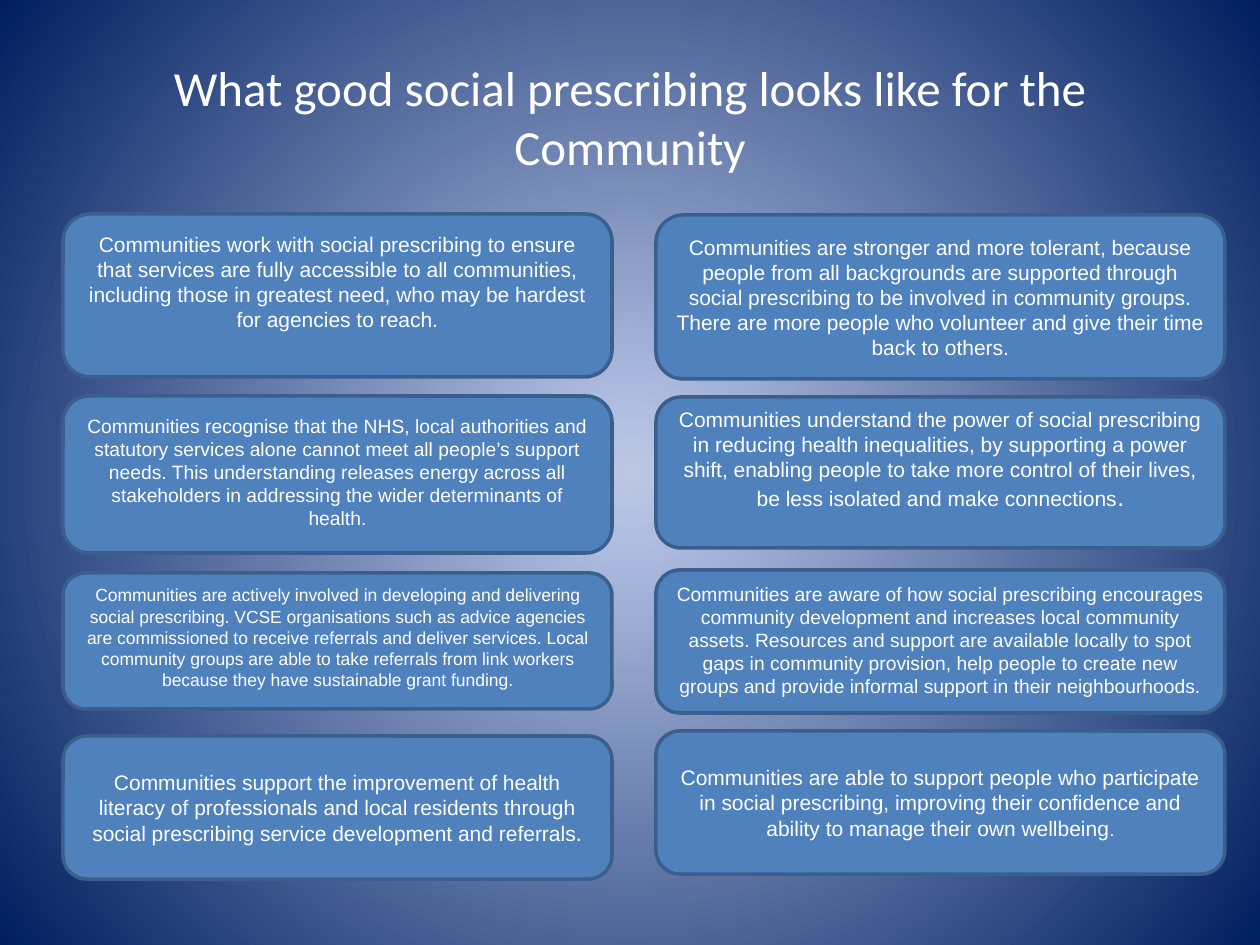
from dataclasses import dataclass

from lxml import etree
from pptx import Presentation
from pptx import util as u
from pptx.dml import color
from pptx.enum import shapes, text
from pptx.oxml import ns

SCALE = 914400 / 126


@dataclass(frozen=True)
class Theme:
    """Colours, fonts and type sizes of the deck."""
    white: str = "FFFFFF"
    card: str = "4F81BD"
    edge: str = "3A5F8C"
    glow: tuple = ((0, "BDC7E3"), (8, "B0BEE1"), (100, "001F5F"))
    heading_font: str = "Calibri"
    body_font: str = "Arial"
    heading: int = 28
    large: int = 14
    body: int = 12
    small: int = 11
    tiny: int = 10


def px(length):
    """Turn pixels into EMU."""
    return u.Emu(round(length * SCALE))


class Sheet:
    """Draws styled elements on the current slide."""

    def __init__(self, page, theme):
        self.page, self.theme = page, theme

    def background(self):
        """Fill the slide with a circular gradient."""
        self.page.background.fill.solid()
        holder = self.page.element.find(".//" + ns.qn("p:bgPr"))
        stops = "".join(
            f'<a:gs pos="{at * 1000}"><a:srgbClr val="{tone}"/></a:gs>'
            for at, tone in self.theme.glow)
        gradient = etree.fromstring(
            f'<a:gradFill {ns.nsdecls("a")} rotWithShape="1"><a:gsLst>{stops}</a:gsLst>'
            '<a:path path="circle"><a:fillToRect l="50000" t="50000" r="50000" b="50000"/>'
            '</a:path></a:gradFill>')
        holder.replace(holder[0], gradient)

    def set_text(self, box, runs, font, frame_format):
        """Set one centred paragraph made of (text, size) runs."""
        frame = box.text_frame
        settings = {"word_wrap": True, "vertical_anchor": text.MSO_ANCHOR.MIDDLE}
        for name, value in {**settings, **frame_format}.items():
            setattr(frame, name, value)
        para = frame.paragraphs[0]
        para.alignment = text.PP_ALIGN.CENTER
        for words, size in runs:
            span = para.add_run()
            span.text = words
            for name, value in {"name": font, "size": u.Pt(size)}.items():
                setattr(span.font, name, value)
            span.font.color.rgb = color.RGBColor.from_string(self.theme.white)

    def title(self, words, left, top, width, height):
        """Place and fill the title placeholder."""
        box = self.page.shapes.title
        place = {"left": left, "top": top, "width": width, "height": height}
        for name, value in place.items():
            setattr(box, name, px(value))
        margins = {f"margin_{side}": px(13) for side in ("left", "top", "right", "bottom")}
        self.set_text(box, [(words, self.theme.heading)], self.theme.heading_font, margins)

    def card(self, runs, left, top, width, height, lift=0):
        """Draw a rounded card, its text raised by extra space below."""
        box = self.page.shapes.add_shape(
            shapes.MSO_SHAPE.ROUNDED_RECTANGLE, *map(px, (left, top, width, height)))
        box.shadow.inherit = False
        box.fill.solid()
        box.fill.fore_color.rgb = color.RGBColor.from_string(self.theme.card)
        box.line.color.rgb = color.RGBColor.from_string(self.theme.edge)
        box.line.width = u.Pt(2)
        self.set_text(box, runs, self.theme.body_font, {"margin_bottom": px(6 + lift)})


def main():
    """Build and save the deck."""
    deck = Presentation()
    deck.slide_width, deck.slide_height = px(1260), px(945)
    theme = Theme()
    sheet = Sheet(deck.slides.add_slide(deck.slide_layouts[5]), theme)
    sheet.background()
    sheet.title("What good social prescribing looks like for the Community", 63, 38, 1134, 157)

    left_cards = [
        (214, 163, 28, [("Communities work with social prescribing to ensure that services are fully accessible to all communities, including those in greatest need, who may be hardest for agencies to reach.", theme.body)]),
        (396, 157, 6, [("Communities recognise that the NHS, local authorities and statutory services alone cannot meet all people’s support needs. This understanding releases energy across all stakeholders in addressing the wider determinants of health.", theme.small)]),
        (573, 136, 8, [("Communities are actively involved in developing and delivering social prescribing. VCSE organisations such as advice agencies are commissioned to receive referrals and deliver services. Local community groups are able to take referrals from link workers because they have sustainable grant funding.", theme.tiny)]),
        (736, 143, 0, [("Communities support the improvement of health literacy of professionals and local residents through social prescribing service development and referrals.", theme.body)]),
    ]
    right_cards = [
        (215, 164, 0, [("Communities are stronger and more tolerant, because people from all backgrounds are supported through social prescribing to be involved in community groups. There are more people who volunteer and give their time back to others.", theme.body)]),
        (397, 151, 28, [("Communities understand the power of social prescribing in reducing health inequalities, by supporting a power shift, enabling people to take more control of their lives, be less isolated and make connections", theme.body), (".", theme.large)]),
        (570, 143, 4, [("Communities are aware of how social prescribing encourages community development and increases local community assets. Resources and support are available locally to spot gaps in community provision, help people to create new groups and provide informal support in their neighbourhoods.", theme.small)]),
        (731, 143, 0, [("Communities are able to support people who participate in social prescribing, improving their confidence and ability to manage their own wellbeing", theme.body), (".", theme.tiny)]),
    ]
    for left, width, cards in ((63, 549, left_cards), (656, 569, right_cards)):
        for top, height, lift, runs in cards:
            sheet.card(runs, left, top, width, height, lift)

    deck.save("out.pptx")


if __name__ == "__main__":
    main()
